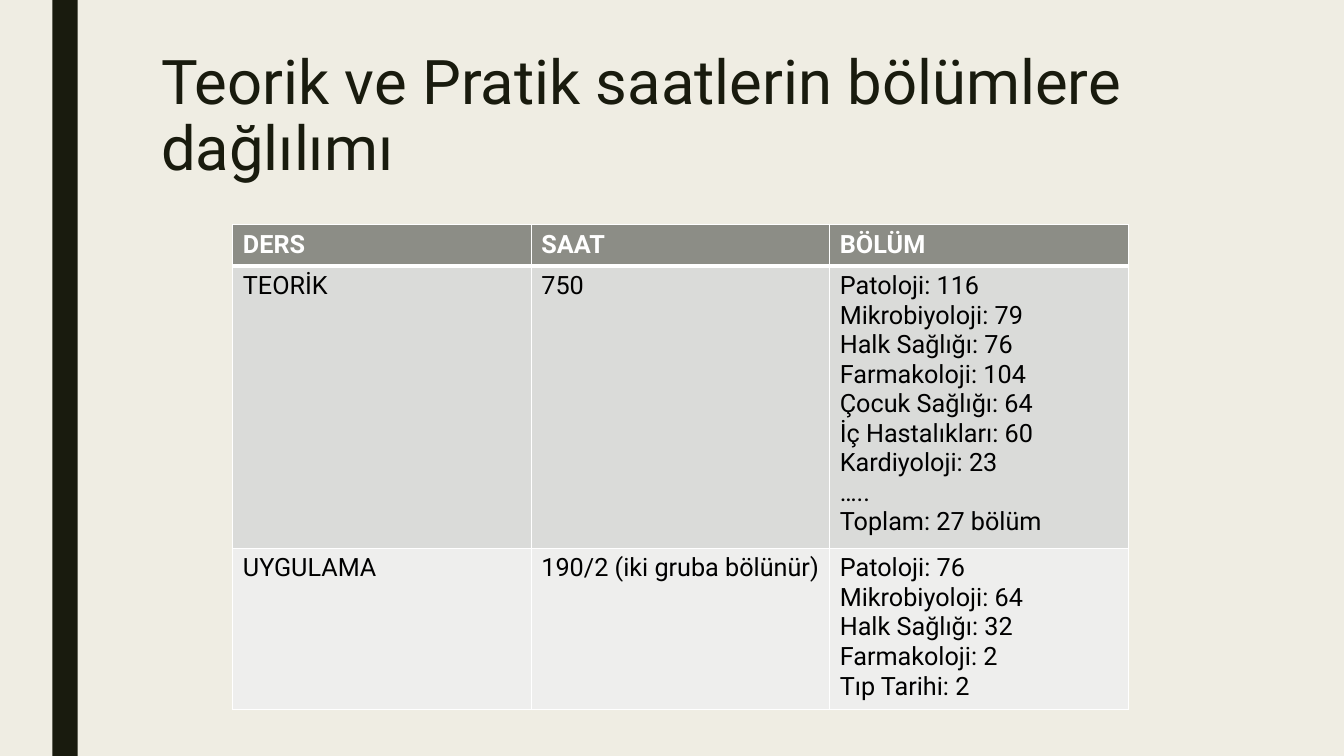
"""Build the slide on how theory and practice hours are split between departments."""
from dataclasses import dataclass

from lxml import etree
from pptx import Presentation
from pptx.dml.color import RGBColor
from pptx.enum.shapes import MSO_SHAPE
from pptx.enum.text import MSO_ANCHOR
from pptx.oxml.ns import qn
from pptx.slide import Slide
from pptx.table import _Cell
from pptx.text.text import TextFrame
from pptx.util import Inches, Pt

RECTANGLE = MSO_SHAPE.RECTANGLE
TOP = MSO_ANCHOR.TOP


@dataclass(frozen=True)
class Theme:
    font: str = "Roboto"
    background: str = "EFEDE3"
    dark: str = "191B0E"
    border: str = "FFFFFF"
    title_size: float = 44
    table_size: float = 18
    title_spacing: float = 0.89
    thin: float = 1
    thick: float = 3


@dataclass(frozen=True)
class TableRow:
    cells: tuple[str, str, str]
    height: float
    fill: str
    color: str = "000000"
    bold: bool = False
    top: float = Theme.thin
    bottom: float = Theme.thin


THEME = Theme()
TITLE = "Teorik ve Pratik saatlerin bölümlere dağlılımı"
COLUMN_WIDTH = 2.96
ROWS = (
    TableRow(("DERS", "SAAT", "BÖLÜM"), 0.41, "8C8D86", "FFFFFF", True, bottom=THEME.thick),
    TableRow(
        (
            "TEORİK",
            "750",
            "Patoloji: 116\nMikrobiyoloji: 79\nHalk Sağlığı: 76\nFarmakoloji: 104\n"
            "Çocuk Sağlığı: 64\nİç Hastalıkları: 60\nKardiyoloji: 23\n…..\nToplam: 27 bölüm",
        ),
        2.74,
        "DADBD9",
        top=THEME.thick,
    ),
    TableRow(
        (
            "UYGULAMA",
            "190/2 (iki gruba bölünür)",
            "Patoloji: 76\nMikrobiyoloji: 64\nHalk Sağlığı: 32\nFarmakoloji: 2\nTıp Tarihi: 2",
        ),
        1.56,
        "EEEEED",
    ),
)


def write_text(frame: TextFrame, text: str, size: float, color: str, bold: bool = False) -> None:
    """Write each line of the text as one paragraph with one run."""
    for index, line in enumerate(text.split("\n")):
        paragraph = frame.add_paragraph() if index else frame.paragraphs[0]
        run = paragraph.add_run()
        run.text = line
        run.font.name = THEME.font
        run.font.size = Pt(size)
        run.font.bold = bold
        run.font.color.rgb = RGBColor.from_string(color)


def set_borders(cell: _Cell, top: float, bottom: float) -> None:
    """Draw the four borders of a cell."""
    properties = cell._tc.get_or_add_tcPr()
    sides = (("L", THEME.thin), ("R", THEME.thin), ("T", top), ("B", bottom))
    for index, (side, width) in enumerate(sides):
        line = etree.Element(qn(f"a:ln{side}"), w=str(Pt(width)))
        fill = etree.SubElement(line, qn("a:solidFill"))
        etree.SubElement(fill, qn("a:srgbClr"), val=THEME.border)
        properties.insert(index, line)


def add_side_bar(slide: Slide) -> None:
    """Add the dark vertical bar at the left."""
    bar = slide.shapes.add_shape(RECTANGLE, Inches(0.52), Inches(0), Inches(0.25), Inches(7.5))
    bar.shadow.inherit = False
    bar.fill.solid()
    bar.fill.fore_color.rgb = RGBColor.from_string(THEME.dark)
    bar.line.fill.background()


def add_title(slide: Slide) -> None:
    """Add the slide title."""
    box = slide.shapes.add_textbox(Inches(1.5), Inches(0.47), Inches(10.5), Inches(1.62))
    frame = box.text_frame
    frame.word_wrap = True
    frame.vertical_anchor = TOP
    write_text(frame, TITLE, THEME.title_size, THEME.dark)
    frame.paragraphs[0].line_spacing = THEME.title_spacing


def add_hours_table(slide: Slide) -> None:
    """Add the table of hours by department."""
    column_count = len(ROWS[0].cells)
    table = slide.shapes.add_table(
        len(ROWS),
        column_count,
        Inches(2.31),
        Inches(2.23),
        Inches(COLUMN_WIDTH * column_count),
        Inches(sum(row.height for row in ROWS)),
    ).table
    for column in table.columns:
        column.width = Inches(COLUMN_WIDTH)
    for row_index, row in enumerate(ROWS):
        table.rows[row_index].height = Inches(row.height)
        for column_index, text in enumerate(row.cells):
            cell = table.cell(row_index, column_index)
            cell.fill.solid()
            cell.fill.fore_color.rgb = RGBColor.from_string(row.fill)
            set_borders(cell, row.top, row.bottom)
            write_text(cell.text_frame, text, THEME.table_size, row.color, row.bold)


def main() -> None:
    """Build and save the presentation."""
    presentation = Presentation()
    presentation.slide_width = Inches(13.33)
    presentation.slide_height = Inches(7.5)
    slide = presentation.slides.add_slide(presentation.slide_layouts[6])
    slide.background.fill.solid()
    slide.background.fill.fore_color.rgb = RGBColor.from_string(THEME.background)
    add_side_bar(slide)
    add_title(slide)
    add_hours_table(slide)
    presentation.save("out.pptx")


if __name__ == "__main__":
    main()
